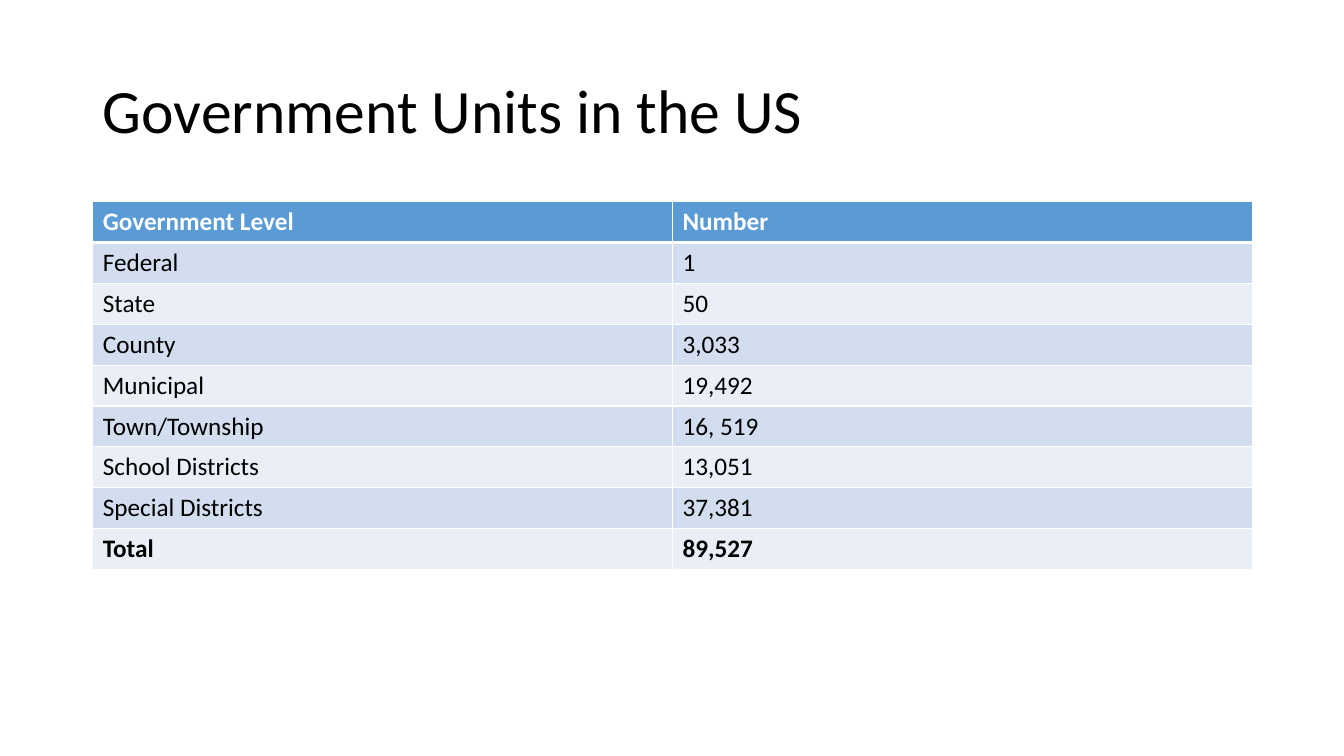
from lxml.etree import SubElement
from pptx import Presentation
from pptx.dml.color import RGBColor
from pptx.enum.text import MSO_ANCHOR, PP_ALIGN
from pptx.oxml.ns import qn
from pptx.util import Inches, Pt

FONT = "Calibri"
COLORS = {
    "white": "FFFFFF",
    "text": "000000",
    "header": "5B9BD5",
    "odd": "D2DEEF",
    "even": "EAEFF7",
}
MARGIN, CONTENT_W = Inches(0.92), Inches(11.5)
TABLE_TOP, TABLE_H = Inches(2), Inches(3.65)
ROWS = [
    ("Government Level", "Number"),
    ("Federal", "1"),
    ("State", "50"),
    ("County", "3,033"),
    ("Municipal", "19,492"),
    ("Town/Township", "16, 519"),
    ("School Districts", "13,051"),
    ("Special Districts", "37,381"),
    ("Total", "89,527"),
]


def rgb(name):
    return RGBColor.from_string(COLORS[name])


def add_run(p, text, size, color, bold=False):
    r = p.add_run()
    r.text = text
    r.font.name = FONT
    r.font.size = Pt(size)
    r.font.bold = bold
    r.font.color.rgb = rgb(color)


def add_title(slide, text):
    sp = slide.shapes.title
    sp.left, sp.top = MARGIN, Inches(0.4)
    sp.width, sp.height = CONTENT_W, Inches(1.45)
    tf = sp.text_frame
    tf.word_wrap = True
    tf.vertical_anchor = MSO_ANCHOR.MIDDLE
    p = tf.paragraphs[0]
    p.alignment = PP_ALIGN.LEFT
    p.line_spacing = 0.9
    add_run(p, text, 44, "text")


def set_borders(cell, top=1, bottom=1):
    """White borders; call before the fill so the XML order is valid."""
    tc_pr = cell._tc.get_or_add_tcPr()
    for side, width in (("L", 1), ("R", 1), ("T", top), ("B", bottom)):
        ln = SubElement(tc_pr, qn(f"a:ln{side}"), w=str(Pt(width)))
        fill = SubElement(ln, qn("a:solidFill"))
        SubElement(fill, qn("a:srgbClr"), val=COLORS["white"])


def add_units_table(slide, rows):
    n_rows, n_cols = len(rows), len(rows[0])
    table = slide.shapes.add_table(
        n_rows, n_cols, MARGIN, TABLE_TOP, CONTENT_W, TABLE_H).table
    for i, row in enumerate(rows):
        header, total = i == 0, i == n_rows - 1
        fill = "header" if header else "odd" if i % 2 else "even"
        for j, text in enumerate(row):
            cell = table.cell(i, j)
            # The rule under the header is heavier than the others
            set_borders(cell, top=3 if i == 1 else 1, bottom=3 if header else 1)
            cell.fill.solid()
            cell.fill.fore_color.rgb = rgb(fill)
            add_run(cell.text_frame.paragraphs[0], text, 18,
                    "white" if header else "text", header or total)


def main():
    prs = Presentation()
    prs.slide_width, prs.slide_height = Inches(13.33), Inches(7.5)
    slide = prs.slides.add_slide(prs.slide_layouts[5])
    add_title(slide, "Government Units in the US")
    add_units_table(slide, ROWS)
    prs.save("out.pptx")


if __name__ == "__main__":
    main()
